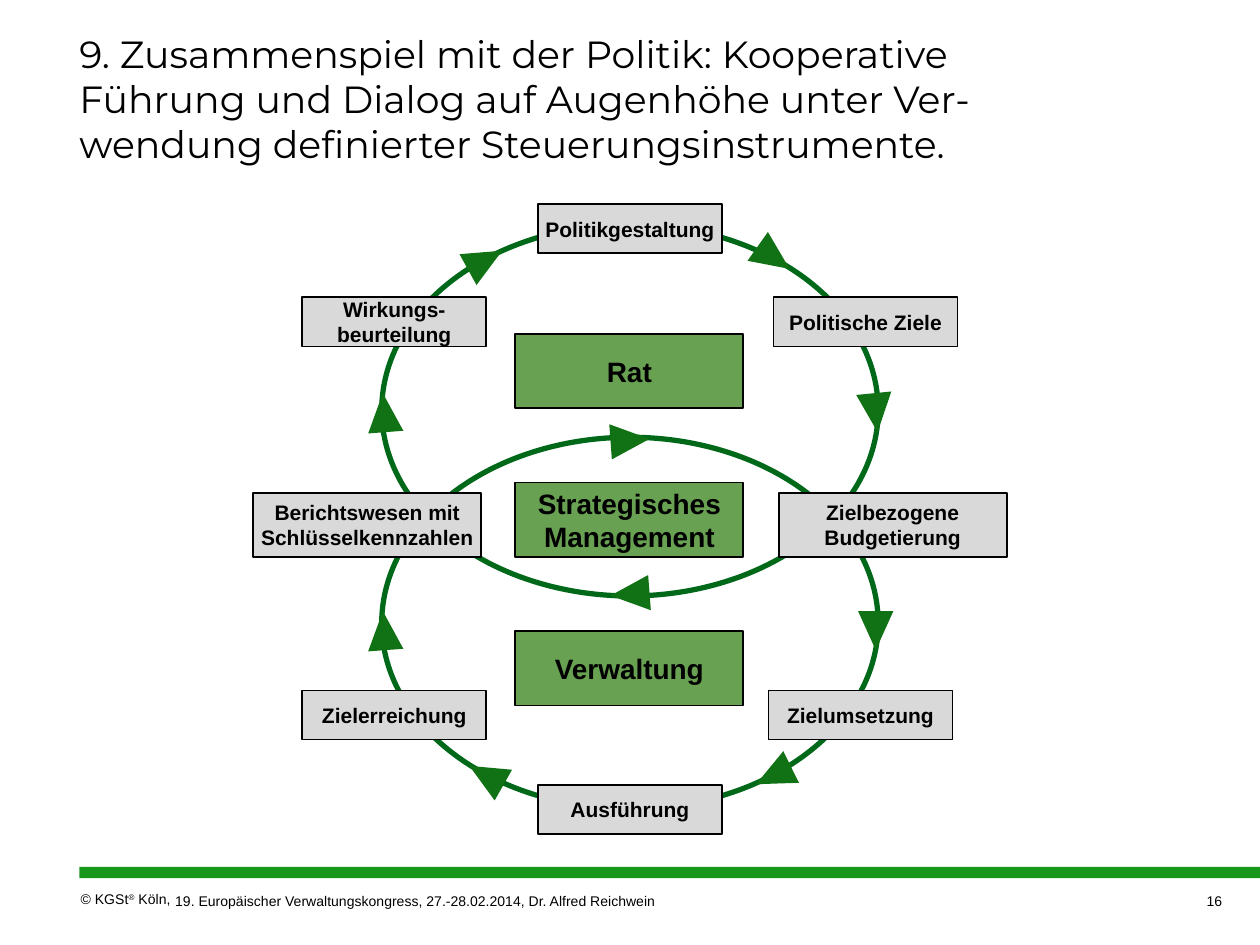
from pptx import Presentation
from pptx.dml.color import RGBColor
from pptx.enum.shapes import MSO_SHAPE
from pptx.enum.text import MSO_ANCHOR, MSO_AUTO_SIZE, PP_ALIGN
from pptx.util import Inches, Pt

BLACK = RGBColor(0x00, 0x00, 0x00)
BAR_GREEN = RGBColor(0x17, 0x98, 0x1C)
RING_GREEN = RGBColor(0x00, 0x69, 0x19)
ARROW_GREEN = RGBColor(0x11, 0x72, 0x15)
ACTOR_GREEN = RGBColor(0x68, 0xA1, 0x52)
STEP_GREY = RGBColor(0xD9, 0xD9, 0xD9)

TITLE = ("9. Zusammenspiel mit der Politik: Kooperative Führung und Dialog auf "
         "Augenhöhe unter Ver-wendung definierter Steuerungsinstrumente.")
COPYRIGHT = ["© KGSt", "®", " Köln,"]
EVENT = "19. Europäischer Verwaltungskongress, 27.-28.02.2014, Dr. Alfred Reichwein"
PAGE = "16"

RING_LEFT, RING_SIZE = 3.03, (3.94, 2.95)
RING_TOPS = [1.78, 3.47]

STEP_SIZE, WIDE_SIZE = (1.46, 0.39), (1.81, 0.51)
STEPS = [  # text, left, top, size
    ("Politikgestaltung", 4.27, 1.62, STEP_SIZE),
    ("Politische Ziele", 6.14, 2.36, STEP_SIZE),
    ("Zielbezogene Budgetierung", 6.18, 3.91, WIDE_SIZE),
    ("Zielumsetzung", 6.1, 5.48, STEP_SIZE),
    ("Ausführung", 4.27, 6.23, STEP_SIZE),
    ("Zielerreichung", 2.4, 5.48, STEP_SIZE),
    ("Berichtswesen mit Schlüsselkennzahlen", 2.01, 3.91, WIDE_SIZE),
    ("Wirkungs-beurteilung", 2.4, 2.36, STEP_SIZE),
]

ACTORS = ["Rat", "Strategisches\nManagement", "Verwaltung"]
ACTOR_LEFT, ACTOR_TOP, ACTOR_PITCH, ACTOR_SIZE = 4.09, 2.65, 1.18, (1.81, 0.59)

ARROW_SIZE = (0.28, 0.31)
ARROWS = [  # left, top, clockwise angle from pointing up
    (6, 1.89, 125.3), (6.81, 3.12, 174.4), (6.81, 4.85, 180),
    (6, 6, 243.8), (3.72, 6, 299.5), (2.91, 4.85, 355.8),
    (2.91, 3.12, 355.7), (3.71, 1.91, 61.1),
    (4.86, 3.34, 85.8), (4.86, 4.56, 265.6),
]


def add_shape(slide, kind, left, top, size, fill=None, line=None, width=1):
    sp = slide.shapes.add_shape(kind, *map(Inches, (left, top, *size)))
    sp.shadow.inherit = False
    if fill is None:
        sp.fill.background()
    else:
        sp.fill.solid()
        sp.fill.fore_color.rgb = fill
    if line is None:
        sp.line.fill.background()
    else:
        sp.line.color.rgb = line
        sp.line.width = Pt(width)
    return sp


def set_frame(tf, margins, anchor, wrap=True):
    tf.auto_size = MSO_AUTO_SIZE.NONE
    tf.word_wrap = wrap
    tf.vertical_anchor = anchor
    tf.margin_left, tf.margin_top, tf.margin_right, tf.margin_bottom = map(Inches, margins)


def set_paragraphs(tf, size, align, font="Arial", bold=False):
    for p in tf.paragraphs:
        p.alignment = align
        p.font.name = font
        p.font.size = Pt(size)
        p.font.bold = bold
        p.font.color.rgb = BLACK


def add_box(slide, text, left, top, size, fill, font_size):
    tf = add_shape(slide, MSO_SHAPE.RECTANGLE, left, top, size, fill, BLACK).text_frame
    tf.text = text
    set_frame(tf, [0.04] * 4, MSO_ANCHOR.MIDDLE)
    set_paragraphs(tf, font_size, PP_ALIGN.CENTER, bold=True)


def add_footer(slide, runs, box, margins, anchor, align=PP_ALIGN.LEFT, wrap=True):
    tf = slide.shapes.add_textbox(*map(Inches, box)).text_frame
    set_frame(tf, margins, anchor, wrap)
    for text in runs:
        r = tf.paragraphs[0].add_run()
        r.text = text
        if text == "®":
            r._r.get_or_add_rPr().set("baseline", "30000")
    set_paragraphs(tf, 8, align)


def main():
    prs = Presentation()
    prs.slide_width, prs.slide_height = Inches(10), Inches(7.5)
    slide = prs.slides.add_slide(prs.slide_layouts[5])

    title = slide.shapes.title
    title.left, title.top, title.width, title.height = map(Inches, (0.63, 0.3, 8.14, 1.07))
    title.text_frame.text = TITLE
    set_frame(title.text_frame, (0, 0.05, 0.12, 0.05), MSO_ANCHOR.BOTTOM)
    set_paragraphs(title.text_frame, 21.6, PP_ALIGN.LEFT, "Montserrat")

    add_shape(slide, MSO_SHAPE.RECTANGLE, 0.63, 6.88, (9.37, 0.09), BAR_GREEN)
    add_footer(slide, COPYRIGHT, (0.64, 7.07, 0.75, 0.18), (0, 0, 0, 0.05),
               MSO_ANCHOR.TOP, wrap=False)
    add_footer(slide, [EVENT], (1.35, 7.06, 7.09, 0.18), (0.04, 0.05, 0.04, 0.05),
               MSO_ANCHOR.MIDDLE)
    add_footer(slide, [PAGE], (8.52, 7.06, 1.18, 0.18), (0.1, 0.05, 0, 0.05),
               MSO_ANCHOR.MIDDLE, PP_ALIGN.RIGHT)

    for top in RING_TOPS:
        add_shape(slide, MSO_SHAPE.OVAL, RING_LEFT, top, RING_SIZE, line=RING_GREEN, width=3)
    for text, left, top, size in STEPS:
        add_box(slide, text, left, top, size, STEP_GREY, 12)
    for i, text in enumerate(ACTORS):
        add_box(slide, text, ACTOR_LEFT, ACTOR_TOP + i * ACTOR_PITCH, ACTOR_SIZE,
                ACTOR_GREEN, 16)
    for left, top, angle in ARROWS:
        arrow = add_shape(slide, MSO_SHAPE.ISOSCELES_TRIANGLE, left, top, ARROW_SIZE,
                          ARROW_GREEN)
        arrow.rotation = angle

    prs.save("out.pptx")


if __name__ == "__main__":
    main()
